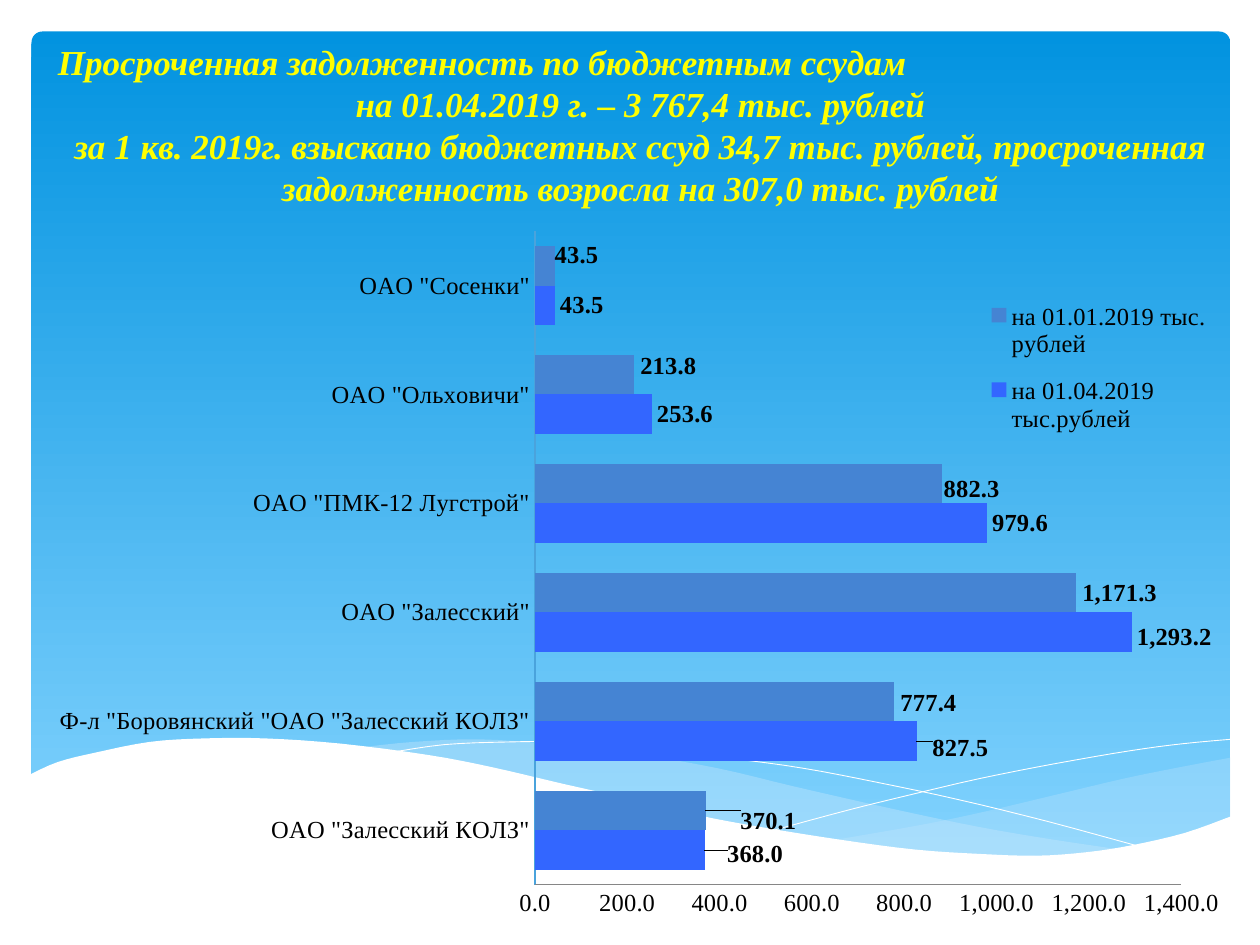
from lxml import etree
from pptx import Presentation
from pptx.chart.data import CategoryChartData
from pptx.dml.color import RGBColor
from pptx.enum.chart import (XL_CHART_TYPE, XL_LABEL_POSITION as LabelPos,
                             XL_LEGEND_POSITION as LegendPos, XL_TICK_MARK as Tick)
from pptx.enum.shapes import MSO_SHAPE
from pptx.enum.text import MSO_ANCHOR, PP_ALIGN
from pptx.oxml import parse_xml
from pptx.oxml.ns import nsdecls, qn
from pptx.util import Pt

COLORS = {"sky_top": "0293E0", "sky_bottom": "83D3FE", "veil": "C6E7FC",
          "white": "FFFFFF", "title": "FFFF00", "text": "000000",
          "april": "3366FF", "january": "4584D3", "axis": "868686", "base": "4AA3DC"}
FONT = "Times New Roman"
NUMBER = "#,##0.0"

TITLE = [
    ("Просроченная задолженность по бюджетным ссудам", PP_ALIGN.LEFT),
    ("на 01.04.2019 г. – 3 767,4 тыс. рублей", PP_ALIGN.CENTER),
    ("за 1 кв. 2019г. взыскано бюджетных ссуд 34,7 тыс. рублей, просроченная "
     "задолженность возросла на 307,0 тыс. рублей", PP_ALIGN.CENTER),
]
DEBTORS = ['ОАО "Залесский КОЛЗ"', 'Ф-л "Боровянский "ОАО "Залесский КОЛЗ"',
           'ОАО "Залесский"', 'ОАО "ПМК-12 Лугстрой"', 'ОАО "Ольховичи"', 'ОАО "Сосенки"']
# name, colour, values, label shifts in points
DEBTS = [
    ("на 01.04.2019 тыс.рублей", "april", (368, 827.5, 1293.2, 979.6, 253.6, 43.5),
     [(10, 2), (6, 4), (0, 3)]),
    ("на 01.01.2019 тыс. рублей", "january", (370.1, 777.4, 1171.3, 882.3, 213.8, 43.5),
     [(17, 6), (1, 1), (1, 0), (-2, 3), (1, -5), (-3, -6)]),
]

# Wave knots in points, measured from the corner of the wave box
VEIL_RIGHT = ([(703, 13), (674, 18.5), (642, 25), (600, 35), (562, 44), (526, 51.5), (477, 60)],
              [(477, 60), (498, 63), (528, 66.5), (563, 69), (594, 69), (622, 67.5),
               (647, 64), (675, 57), (703, 47.5)])
VEIL_MIDDLE = ([(207, 7), (236, 4), (274, 2.5), (318, 5.5), (361, 10.5), (410, 19),
                (454, 29.5), (509, 42), (559, 52.5), (603, 60), (644, 66)],
               [(644, 66), (611, 69), (582, 69.5), (539, 68), (501, 64), (457, 57.5),
                (408, 48), (353.5, 36.5), (307.5, 25), (261.5, 15), (207, 7)])
LINE_FALLING = [(223, 10), (254, 5.5), (289.5, 4), (325, 4), (368, 7.5), (419, 13.5),
                (459, 19), (501, 27), (548, 37), (599, 49.5), (654, 64.5)]
LINE_RISING = [(442, 54.5), (484.5, 43), (519, 34.5), (559.5, 25), (602.5, 16.5),
               (646, 9), (676, 5), (703, 2.5)]
CREST = [(16.5, 23), (33, 15.5), (55, 10), (85.5, 4), (116, 2), (152, 2), (195, 5),
         (245, 11.5), (281.5, 18.5), (322, 28), (362, 37), (399.5, 46), (434, 52.5),
         (481, 60), (523, 65.5), (560, 68), (592.5, 69), (621, 67), (647, 63),
         (677, 56), (703.5, 46.5)]
FLOOR = [(703.5, 106.5), (16.5, 106.5)]


def rgb(name):
    return RGBColor.from_string(COLORS[name])


def style_font(font, size, color="text", bold=False, italic=False):
    font.name, font.size, font.bold, font.italic = FONT, Pt(size), bold, italic
    font.color.rgb = rgb(color)


def smooth(knots, steps=4):
    """Catmull-Rom curve through the knots."""
    padded = [knots[0], *knots, knots[-1]]
    curve = []
    for a, b, c, d in zip(padded, padded[1:], padded[2:], padded[3:]):
        for t in (i / steps for i in range(steps)):
            curve.append(tuple(
                q + t / 2 * (r - p + t * (2 * p - 5 * q + 4 * r - s + t * (3 * (q - r) + s - p)))
                for p, q, r, s in zip(a, b, c, d)))
    return curve + [knots[-1]]


def add_wave(slide, box, points, fill=None, alpha=100):
    start, *rest = [(Pt(box[0] + x), Pt(box[1] + y)) for x, y in points]
    builder = slide.shapes.build_freeform(*start)
    builder.add_line_segments(rest, close=fill is not None)
    wave = builder.convert_to_shape()
    wave.shadow.inherit = False
    if fill is None:
        wave.fill.background()
        wave.line.color.rgb = rgb("white")
        wave.line.width = Pt(0.5)
        return
    wave.fill.solid()
    wave.fill.fore_color.rgb = rgb(fill)
    wave.line.fill.background()
    if alpha < 100:
        tint = wave.fill._xPr.find(".//" + qn("a:srgbClr"))
        etree.SubElement(tint, qn("a:alpha")).set("val", str(alpha * 1000))


def draw_sky(slide, box):
    sky = slide.shapes.add_shape(MSO_SHAPE.ROUNDED_RECTANGLE, *map(Pt, box))
    sky.adjustments[0] = 0.013
    sky.shadow.inherit = False
    sky.line.fill.background()
    sky.fill.gradient()
    sky.fill.gradient_angle = 270
    for stop, color, position in zip(sky.fill.gradient_stops, ("sky_top", "sky_bottom"), (0, 1)):
        stop.color.rgb = rgb(color)
        stop.position = position


def draw_waves(slide, box):
    for (upper, lower), alpha in ((VEIL_RIGHT, 29), (VEIL_MIDDLE, 40)):
        add_wave(slide, box, smooth(upper) + smooth(lower)[1:], "veil", alpha)
    for line in (LINE_FALLING, LINE_RISING):
        add_wave(slide, box, smooth(line))
    add_wave(slide, box, smooth(CREST) + FLOOR, "white")


def draw_title(slide, box):
    frame = slide.shapes.add_textbox(*map(Pt, box)).text_frame
    frame.word_wrap = True
    frame.vertical_anchor = MSO_ANCHOR.BOTTOM
    for i, (text, align) in enumerate(TITLE):
        line = frame.paragraphs[0] if i == 0 else frame.add_paragraph()
        line.alignment = align
        line.line_spacing = Pt(24)
        run = line.add_run()
        run.text = text
        style_font(run.font, 20, "title", bold=True, italic=True)


def manual_layout(x, y, w=None, h=None, inner=False):
    """A c:layout element; without a size it shifts, with one it places."""
    values = {"layoutTarget": "inner"} if inner else {}
    if w:
        values.update(xMode="edge", yMode="edge")
    values.update(x=round(x, 4), y=round(y, 4))
    if w:
        values.update(w=w, h=h)
    parts = "".join(f'<c:{tag} val="{value}"/>' for tag, value in values.items())
    return parse_xml(f'<c:layout {nsdecls("c")}><c:manualLayout>{parts}</c:manualLayout></c:layout>')


def draw_debt_chart(slide, box):
    data = CategoryChartData(number_format=NUMBER)
    data.categories = DEBTORS
    for name, _, values, _ in DEBTS:
        data.add_series(name, values)
    chart = slide.shapes.add_chart(XL_CHART_TYPE.BAR_CLUSTERED, *map(Pt, box), data).chart
    chart.has_title = False
    style_font(chart.font, 14)

    # Plot area
    area = chart._chartSpace.find(".//" + qn("c:plotArea"))
    for old in area.findall(qn("c:layout")):
        area.remove(old)
    area.insert(0, manual_layout(0.412, 0.027, 0.548, 0.911, inner=True))
    plot = chart.plots[0]
    plot.gap_width, plot.overlap, plot.vary_by_categories = 75, 0, False

    # Axes
    for axis, color in ((chart.category_axis, "base"), (chart.value_axis, "axis")):
        axis.has_major_gridlines = False
        axis.major_tick_mark = axis.minor_tick_mark = Tick.NONE
        axis.format.line.color.rgb = rgb(color)
        style_font(axis.tick_labels.font, 14)
    ticks = chart.value_axis.tick_labels
    ticks.number_format, ticks.number_format_is_linked = NUMBER, False
    chart.value_axis.minimum_scale, chart.value_axis.maximum_scale = 0, 1400
    chart.value_axis.major_unit = 200

    # Bars and their labels
    for series, (_, color, _, shifts) in zip(plot.series, DEBTS):
        series.format.fill.solid()
        series.format.fill.fore_color.rgb = rgb(color)
        labels = series.data_labels
        labels.show_value, labels.position = True, LabelPos.OUTSIDE_END
        labels.number_format, labels.number_format_is_linked = NUMBER, False
        style_font(labels.font, 14, bold=True)
        for i, (dx, dy) in enumerate(shifts):
            label = series.points[i].data_label
            style_font(label.font, 14, bold=True)
            label.position = LabelPos.OUTSIDE_END
            index = series._element.findall(".//" + qn("c:dLbl"))[i].find(qn("c:idx"))
            index.addnext(manual_layout(dx / box[2], dy / box[3]))

    # Legend
    chart.has_legend = True
    chart.legend.position = LegendPos.RIGHT
    chart.legend.include_in_layout = True
    style_font(chart.legend.font, 14)
    place = chart.legend._element.find(qn("c:legendPos"))
    place.addnext(manual_layout(0.79, 0.1, 0.2, 0.235))


def main():
    deck = Presentation()
    deck.slide_width, deck.slide_height = Pt(720), Pt(540)
    slide = deck.slides.add_slide(deck.slide_layouts[6])
    draw_sky(slide, (18, 18, 685, 475))
    draw_waves(slide, (0, 420, 720, 107))
    draw_title(slide, (26, 32, 680, 91))
    draw_debt_chart(slide, (28, 121, 674, 410))
    deck.save("out.pptx")


if __name__ == "__main__":
    main()
